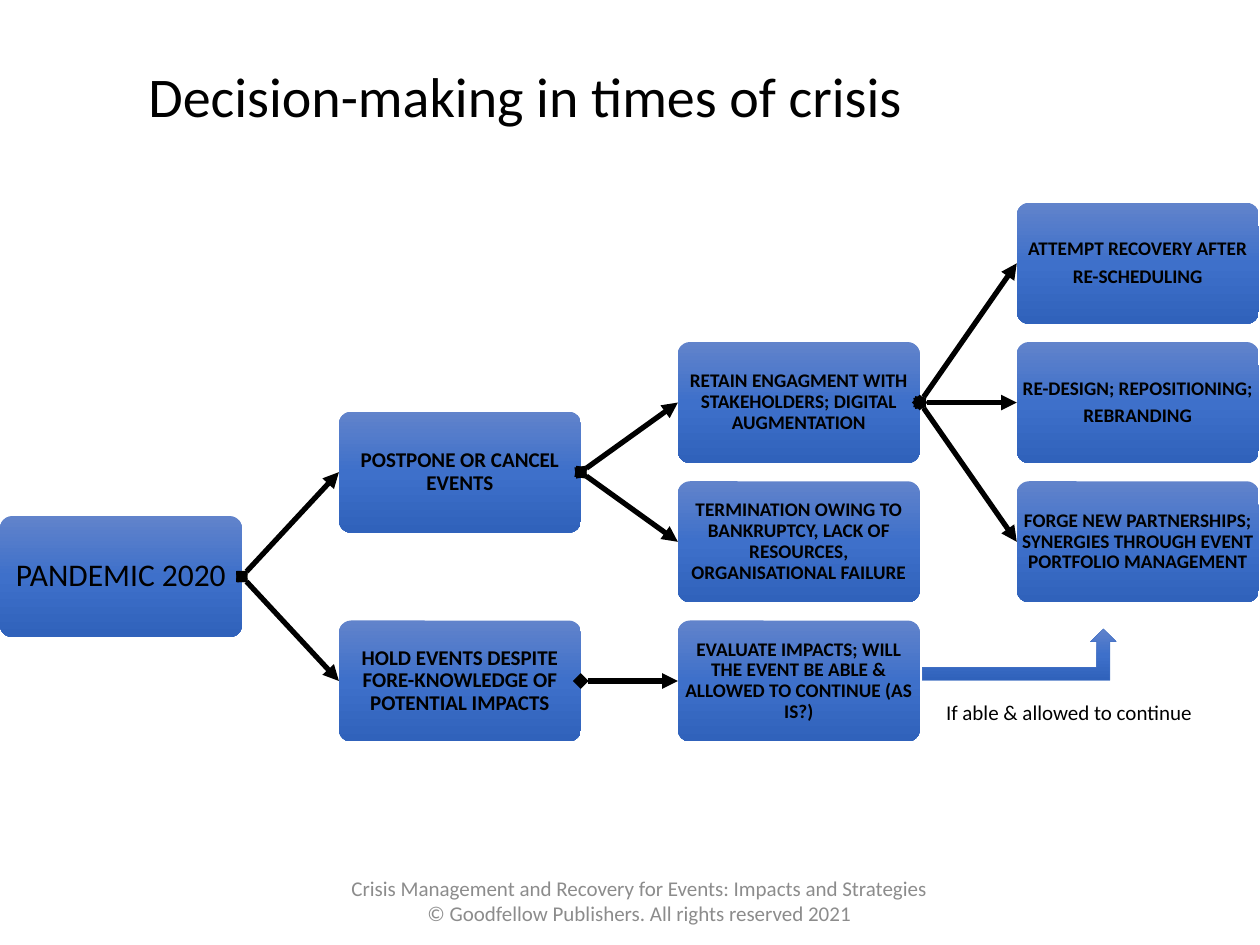
from copy import deepcopy
from lxml.etree import SubElement
from pptx import Presentation
from pptx.dml.color import RGBColor
from pptx.enum.shapes import MSO_CONNECTOR, MSO_SHAPE
from pptx.enum.text import MSO_ANCHOR, PP_ALIGN
from pptx.oxml.ns import qn
from pptx.util import Inches, Pt

COLUMN, ROW, TOP = 2.69, 1.105, 1.61
BOX_WIDTH, BOX_HEIGHT = 1.92, 0.96


def write(shape, text, size, color="000000", bold=False, align=PP_ALIGN.CENTER,
          anchor=MSO_ANCHOR.MIDDLE, wrap=True, inset=None, line_spacing=None, after=0):
    frame = shape.text_frame
    frame.word_wrap = wrap
    frame.vertical_anchor = anchor
    if inset is not None:
        frame.margin_left = frame.margin_right = Inches(inset)
        frame.margin_top = frame.margin_bottom = Inches(inset)
    for index, line in enumerate(text.split("\n")):
        para = frame.paragraphs[0] if index == 0 else frame.add_paragraph()
        para.alignment = align
        para.line_spacing = line_spacing
        para.space_after = Pt(after)
        span = para.add_run()
        span.text = line
        span.font.name = "Calibri"
        span.font.size = Pt(size)
        span.font.bold = bold
        span.font.color.rgb = RGBColor.from_string(color)


def shade(shape):
    shape.shadow.inherit = False
    shape.fill.gradient()
    shape.fill.gradient_angle = 270
    stop_list = shape.fill._fill._gradFill.gsLst
    stop_list.insert(1, deepcopy(stop_list[0]))
    for stop, position, color in zip(shape.fill.gradient_stops, (0, 0.5, 1),
                                     ("6183CB", "3E70CA", "3062BB")):
        stop.position = position
        stop.color.rgb = RGBColor.from_string(color)


deck = Presentation()
deck.slide_width, deck.slide_height = Inches(10), Inches(7.5)
page = deck.slides.add_slide(deck.slide_layouts[6])

footer = page.shapes.add_textbox(Inches(0.74), Inches(6.9), Inches(8.67), Inches(0.49))
write(footer, "Crisis Management and Recovery for Events: Impacts and Strategies\n"
      "© Goodfellow Publishers. All rights reserved 2021", 12, color="8C8C8C")

decisions = {
    "pandemic": (0, 2.25, 18, "PANDEMIC 2020"),
    "postpone": (1, 1.5, 12, "POSTPONE OR CANCEL EVENTS"),
    "hold": (1, 3, 12, "HOLD EVENTS DESPITE FORE-KNOWLEDGE OF POTENTIAL IMPACTS"),
    "retain": (2, 1, 11, "RETAIN ENGAGMENT WITH STAKEHOLDERS; DIGITAL AUGMENTATION"),
    "terminate": (2, 2, 11, "TERMINATION OWING TO BANKRUPTCY, LACK OF RESOURCES, ORGANISATIONAL FAILURE"),
    "evaluate": (2, 3, 11, "EVALUATE IMPACTS; WILL THE EVENT BE ABLE & ALLOWED TO CONTINUE (AS IS?)"),
    "recover": (3, 0, 11, "ATTEMPT RECOVERY AFTER\nRE-SCHEDULING"),
    "redesign": (3, 1, 11, "RE-DESIGN; REPOSITIONING;\nREBRANDING"),
    "partner": (3, 2, 11, "FORGE NEW PARTNERSHIPS; SYNERGIES THROUGH EVENT PORTFOLIO MANAGEMENT"),
}
boxes = {}
for name, (column, row, size, text) in decisions.items():
    box = page.shapes.add_shape(MSO_SHAPE.ROUNDED_RECTANGLE, Inches(column * COLUMN),
                                Inches(TOP + row * ROW), Inches(BOX_WIDTH), Inches(BOX_HEIGHT))
    box.adjustments[0] = 0.1
    shade(box)
    box.line.fill.background()
    write(box, text, size, bold=column > 0, inset=0.01, line_spacing=0.9, after=size * 0.35)
    boxes[name] = box

branches = [
    ("pandemic", "postpone"), ("pandemic", "hold"),
    ("postpone", "retain"), ("postpone", "terminate"), ("hold", "evaluate"),
    ("retain", "recover"), ("retain", "redesign"), ("retain", "partner"),
]
for start, end in branches:
    arrow = page.shapes.add_connector(MSO_CONNECTOR.STRAIGHT, 0, 0, 0, 0)
    arrow.begin_connect(boxes[start], 3)
    arrow.end_connect(boxes[end], 1)
    arrow.line.width = Pt(3)
    arrow.line.color.rgb = RGBColor.from_string("000000")
    outline = arrow.line._get_or_add_ln()
    SubElement(outline, qn("a:headEnd"), type="diamond")
    SubElement(outline, qn("a:tailEnd"), type="triangle")
    SubElement(arrow._element.spPr, qn("a:effectLst"))

return_arrow = page.shapes.add_shape(MSO_SHAPE.BENT_UP_ARROW, Inches(7.32), Inches(4.99),
                                     Inches(1.54), Inches(0.41))
shade(return_arrow)
return_arrow.line.color.rgb = RGBColor.from_string("4472C4")
return_arrow.line.width = Pt(0.25)

labels = [
    (7.41, 5.5, 2.31, 0.3, 12, "If able & allowed to continue"),
    (1.08, 0.44, 6.25, 0.64, 32, "Decision-making in times of crisis"),
]
for left, top, width, height, size, text in labels:
    label = page.shapes.add_textbox(Inches(left), Inches(top), Inches(width), Inches(height))
    write(label, text, size, align=PP_ALIGN.LEFT, anchor=MSO_ANCHOR.TOP, wrap=False)

deck.save("out.pptx")
